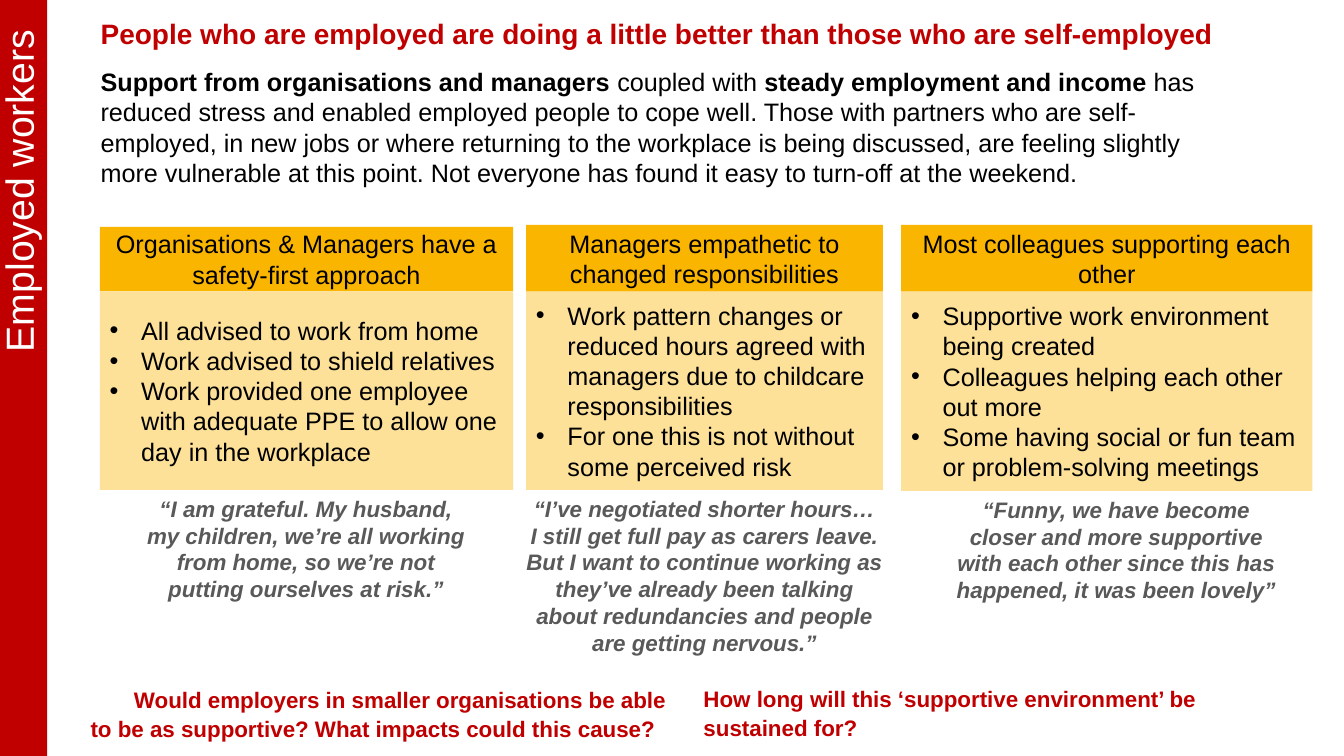
from dataclasses import dataclass

from lxml import etree
from pptx import Presentation
from pptx.dml.color import RGBColor
from pptx.enum.shapes import MSO_SHAPE
from pptx.enum.text import MSO_ANCHOR, MSO_AUTO_SIZE, PP_ALIGN
from pptx.oxml.ns import qn
from pptx.util import Pt

RECTANGLE = MSO_SHAPE.RECTANGLE
MIDDLE = MSO_ANCHOR.MIDDLE
GROW = MSO_AUTO_SIZE.SHAPE_TO_FIT_TEXT
LEFT, CENTER, RIGHT = PP_ALIGN.LEFT, PP_ALIGN.CENTER, PP_ALIGN.RIGHT

FONT = "Arial"
RED, AMBER, GREY, BLACK, WHITE = "C00000", "FAB500", "595959", "000000", "FFFFFF"
BODY_TOP = 208.1
BULLET_INDENT = 22.5
QUESTION_INDENT = 31


@dataclass(frozen=True)
class Box:
    left: float
    top: float
    width: float
    height: float


@dataclass(frozen=True)
class Style:
    size: float
    color: str
    bold: bool = False
    italic: bool = False
    align: PP_ALIGN = LEFT
    space_before: float = 0
    line_spacing: float = 1


@dataclass(frozen=True)
class Theme:
    left: float
    width: float
    heading_top: float
    body_height: float
    heading: str
    points: tuple[str, ...]
    quote: str
    quote_box: Box
    quote_space: float


@dataclass(frozen=True)
class Question:
    box: Box
    text: str
    indent: float


TITLE = Style(20, RED, bold=True)
SUMMARY = Style(18, BLACK, space_before=12)
HEADING = Style(18, BLACK, align=CENTER)
POINT = Style(18, BLACK)
QUESTION = Style(16, RED, bold=True, space_before=12, line_spacing=1.07)
SECTION = Style(28, WHITE, align=RIGHT, line_spacing=0.9)

SUMMARY_PARTS = (
    ("Support from organisations and managers", True),
    (" coupled with ", False),
    ("steady employment and income ", True),
    ("has reduced stress and enabled employed people to cope well. Those with "
     "partners who are self-employed, in new jobs or where returning to the "
     "workplace is being discussed, are feeling slightly more vulnerable at this "
     "point. Not everyone has found it easy to turn-off at the weekend.", False),
)

THEMES = (
    Theme(71.3, 295.2, 162, 141.8,
          "Organisations & Managers have a safety-first approach",
          ("All advised to work from home",
           "Work advised to shield relatives",
           "Work provided one employee with adequate PPE to allow one day in the workplace"),
          "“I am grateful. My husband, my children, we’re all working from home, "
          "so we’re not putting ourselves at risk.”",
          Box(96.5, 349.9, 244.1, 85), 6),
    Theme(375.8, 254.9, 160.6, 141.8,
          "Managers empathetic to changed responsibilities",
          ("Work pattern changes or reduced hours agreed with managers due to "
           "childcare responsibilities",
           "For one this is not without some perceived risk"),
          "“I’ve negotiated shorter hours…\nI still get full pay as carers leave. "
          "But I want to continue working as they’ve already been talking about "
          "redundancies and people\nare getting nervous.”",
          Box(368.6, 349.9, 269.3, 123.8), 6),
    Theme(643.7, 293.8, 160.6, 142.6,
          "Most colleagues supporting each other",
          ("Supportive work environment being created",
           "Colleagues helping each other out more",
           "Some having social or fun team or problem-solving meetings"),
          "“Funny, we have become closer and more supportive with each other since "
          "this has happened, it was been lovely”",
          Box(671, 350.6, 252.7, 85), 12),
)

QUESTIONS = (
    Question(Box(57.6, 485.3, 437.8, 47.5),
             "Would employers in smaller organisations be able to be as supportive? "
             "What impacts could this cause?", QUESTION_INDENT),
    Question(Box(495.4, 484.6, 437.8, 47.5),
             "How long will this ‘supportive environment’ be sustained for?", 0),
)


def rgb(value: str) -> RGBColor:
    return RGBColor.from_string(value)


def style_paragraph(paragraph, style: Style) -> None:
    paragraph.alignment = style.align
    paragraph.space_before = Pt(style.space_before)
    paragraph.line_spacing = style.line_spacing
    font = paragraph.font
    font.name, font.size = FONT, Pt(style.size)
    font.bold, font.italic = style.bold, style.italic
    font.color.rgb = rgb(style.color)


def write(paragraph, text: str, style: Style) -> None:
    paragraph.text = text
    style_paragraph(paragraph, style)


def indent(paragraph, margin: float, first: float) -> None:
    properties = paragraph._p.get_or_add_pPr()
    properties.set("marL", str(Pt(margin)))
    properties.set("indent", str(Pt(first)))


def add_bullet(paragraph) -> None:
    indent(paragraph, BULLET_INDENT, -BULLET_INDENT)
    properties = paragraph._p.get_or_add_pPr()
    bullet_font = etree.Element(qn("a:buFont"), typeface=FONT)
    bullet = etree.Element(qn("a:buChar"), char="•")
    defaults = properties.find(qn("a:defRPr"))
    defaults.addprevious(bullet_font)
    defaults.addprevious(bullet)


def add_panel(slide, box: Box, color: str, opacity: int = 100):
    panel = slide.shapes.add_shape(
        RECTANGLE, Pt(box.left), Pt(box.top), Pt(box.width), Pt(box.height))
    panel.shadow.inherit = False
    panel.fill.solid()
    panel.fill.fore_color.rgb = rgb(color)
    panel.line.fill.background()
    if opacity < 100:
        tint = panel._element.spPr.find(qn("a:solidFill"))[0]
        etree.SubElement(tint, qn("a:alpha"), val=str(opacity * 1000))
    frame = panel.text_frame
    frame.word_wrap = True
    frame.vertical_anchor = MIDDLE
    return frame


def add_text(slide, box: Box):
    frame = slide.shapes.add_textbox(
        Pt(box.left), Pt(box.top), Pt(box.width), Pt(box.height)).text_frame
    frame.word_wrap = True
    frame.auto_size = GROW
    return frame


def add_section_band(slide) -> None:
    frame = add_panel(slide, Box(0, 0, 33.8, 540), RED)
    frame.margin_left, frame.margin_top = Pt(5), Pt(21.6)
    frame.margin_right, frame.margin_bottom = Pt(8.6), Pt(0)
    frame._txBody.bodyPr.set("vert", "vert270")
    write(frame.paragraphs[0], "Employed workers", SECTION)


def add_introduction(slide) -> None:
    frame = add_text(slide, Box(64.8, 7.9, 830.9, 154.8))
    write(frame.paragraphs[0], "People who are employed are doing a little better "
          "than those who are self-employed", TITLE)
    summary = frame.add_paragraph()
    style_paragraph(summary, SUMMARY)
    for text, bold in SUMMARY_PARTS:
        run = summary.add_run()
        run.text = text
        run.font.bold = bold


def add_theme(slide, theme: Theme) -> None:
    body = add_panel(slide, Box(theme.left, BODY_TOP, theme.width, theme.body_height),
                     AMBER, 40)
    for index, text in enumerate(theme.points):
        point = body.add_paragraph() if index else body.paragraphs[0]
        write(point, text, POINT)
        add_bullet(point)
    heading = add_panel(slide, Box(theme.left, theme.heading_top, theme.width,
                                   BODY_TOP - theme.heading_top), AMBER)
    write(heading.paragraphs[0], theme.heading, HEADING)
    quote = add_text(slide, theme.quote_box)
    write(quote.paragraphs[0], theme.quote,
          Style(16, GREY, True, True, CENTER, theme.quote_space))


def add_question(slide, question: Question) -> None:
    paragraph = add_text(slide, question.box).paragraphs[0]
    write(paragraph, question.text, QUESTION)
    indent(paragraph, 0, question.indent)


def main() -> None:
    deck = Presentation()
    deck.slide_width, deck.slide_height = Pt(960), Pt(540)
    slide = deck.slides.add_slide(deck.slide_layouts[6])
    add_section_band(slide)
    add_introduction(slide)
    for theme in THEMES:
        add_theme(slide, theme)
    for question in QUESTIONS:
        add_question(slide, question)
    deck.save("out.pptx")


if __name__ == "__main__":
    main()
